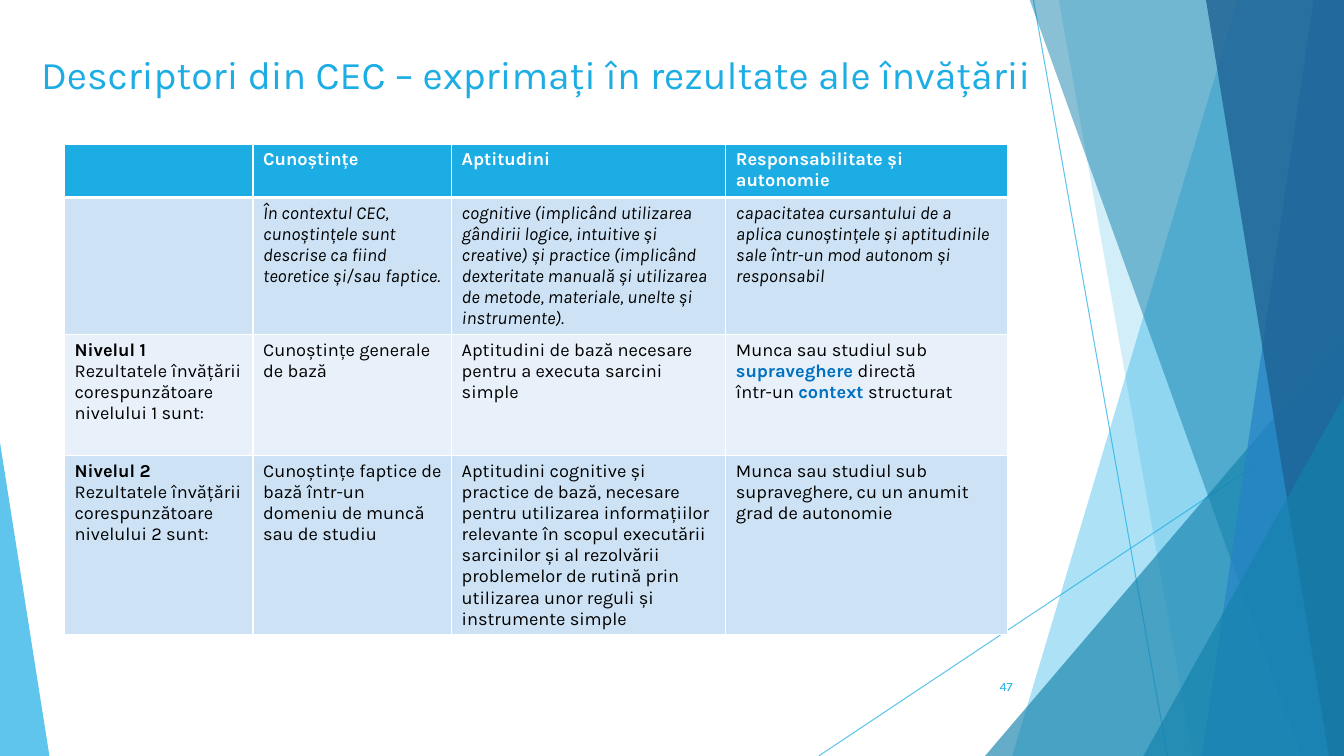
from dataclasses import dataclass
from typing import Optional

from lxml.etree import SubElement
from pptx import Presentation
from pptx.dml.color import RGBColor
from pptx.enum.shapes import MSO_CONNECTOR, MSO_SHAPE
from pptx.enum.text import MSO_ANCHOR, PP_ALIGN
from pptx.oxml.ns import qn
from pptx.util import Inches, Pt

FONT = "Karla"
SKY = RGBColor(0x1C, 0xAD, 0xE4)
TEAL = RGBColor(0x14, 0x82, 0xAC)
BLUE = RGBColor(0x26, 0x83, 0xC6)
NAVY = RGBColor(0x1D, 0x62, 0x94)
ACCENT = RGBColor(0x00, 0x70, 0xC0)
BAND_DARK = RGBColor(0xCD, 0xE3, 0xF5)
BAND_LIGHT = RGBColor(0xE8, 0xF1, 0xFA)
WHITE = RGBColor(0xFF, 0xFF, 0xFF)
BLACK = RGBColor(0x00, 0x00, 0x00)
WIDTH, HEIGHT, PANEL_TOP = 13.33, 7.5, -0.01

HEADER = {"size": Pt(13), "name": FONT, "bold": True, "color": WHITE}
BODY = {"size": Pt(13), "name": FONT, "bold": False, "color": BLACK}
ITALIC = BODY | {"italic": True}
STRONG = BODY | {"bold": True}
KEYWORD = STRONG | {"color": ACCENT}
TITLE = {"size": Pt(28), "name": FONT, "color": SKY}
NUMBER = {"size": Pt(9), "name": FONT, "color": SKY}


@dataclass
class Ray:
    start: tuple[float, float]
    end: tuple[float, float]


@dataclass
class Panel:
    top_left: float
    bottom_left: float
    color: RGBColor
    opacity: int


@dataclass
class Wedge:
    left: float
    top: float
    width: float
    apex: float
    color: RGBColor
    opacity: int


@dataclass
class Span:
    text: str
    style: dict


@dataclass
class Label:
    bounds: tuple[float, float, float, float]
    span: Span
    anchor: MSO_ANCHOR
    alignment: Optional[PP_ALIGN] = None


RAYS = [Ray((10.25, 0), (11.58, HEIGHT)), Ray((WIDTH, 4.03), (8.12, HEIGHT))]
DECOR = [
    Panel(12.28, 10.04, SKY, 36),
    Panel(10.5, 11.83, SKY, 20),
    Wedge(9.77, 3.33, 3.56, 1, TEAL, 66),
    Panel(10.21, 12.91, TEAL, 50),
    Panel(13.03, 11.92, BLUE, 70),
    Panel(11.96, 13.18, NAVY, 80),
    Wedge(11.34, 3.93, 1.99, 1, TEAL, 66),
    Wedge(0, 4.39, 0.49, 0, SKY, 70),
]
LABELS = [
    Label((0.31, 0.45, 10.14, 0.83),
          Span("Descriptori din CEC – exprimați în rezultate ale învățării", TITLE),
          MSO_ANCHOR.TOP),
    Label((9.39, 6.61, 0.75, 0.4), Span("47", NUMBER), MSO_ANCHOR.MIDDLE, PP_ALIGN.RIGHT),
]


def plain(text: str, style: dict = BODY) -> list[list[Span]]:
    return [[Span(text, style)]]


def level(number: int) -> list[list[Span]]:
    return [
        [Span(f"Nivelul {number}", STRONG)],
        [Span(f"Rezultatele învățării corespunzătoare nivelului {number} sunt:", BODY)],
    ]


COLUMNS = [1.87, 1.97, 2.72, 2.79]
ROW_HEIGHTS = [0.53, 1.13, 1.2, 1.65]
ROW_FILLS = [SKY, BAND_DARK, BAND_LIGHT, BAND_DARK]
ROWS = [
    [[], plain("Cunoștințe", HEADER), plain("Aptitudini", HEADER),
     plain("Responsabilitate și autonomie", HEADER)],
    [[],
     plain("În contextul CEC, cunoștințele sunt descrise ca fiind teoretice și/sau faptice.",
           ITALIC),
     plain("cognitive (implicând utilizarea gândirii logice, intuitive și creative) și practice "
           "(implicând dexteritate manuală și utilizarea de metode, materiale, unelte și "
           "instrumente).", ITALIC),
     plain("capacitatea cursantului de a aplica cunoștințele și aptitudinile sale într-un mod "
           "autonom și responsabil", ITALIC)],
    [level(1),
     plain("Cunoștințe generale de bază"),
     plain("Aptitudini de bază necesare pentru a executa sarcini simple"),
     [[Span("Munca sau studiul sub ", BODY), Span("supraveghere ", KEYWORD),
       Span("directă\nîntr-un ", BODY), Span("context ", KEYWORD),
       Span("structurat", BODY)]]],
    [level(2),
     plain("Cunoștințe faptice de bază într-un domeniu de muncă sau de studiu"),
     plain("Aptitudini cognitive și practice de bază, necesare pentru utilizarea informațiilor "
           "relevante în scopul executării sarcinilor și al rezolvării problemelor de rutină "
           "prin utilizarea unor reguli și instrumente simple"),
     plain("Munca sau studiul sub supraveghere, cu un anumit grad de autonomie")],
]


def write_span(para, span: Span) -> None:
    for index, line in enumerate(span.text.split("\n")):
        if index:
            para.add_line_break()
        run = para.add_run()
        run.text = line
        for name, value in span.style.items():
            if name == "color":
                run.font.color.rgb = value
            else:
                setattr(run.font, name, value)


def set_opacity(element, opacity: int) -> None:
    color = next(element.iter(qn("a:srgbClr")))
    SubElement(color, qn("a:alpha"), val=str(opacity * 1000))


def draw_ray(page, ray: Ray) -> None:
    points = [Inches(value) for value in (*ray.start, *ray.end)]
    line = page.shapes.add_connector(MSO_CONNECTOR.STRAIGHT, *points)
    line.line.color.rgb = SKY
    line.line.width = Pt(0.75)
    properties = line._element.spPr
    set_opacity(properties, 70)
    SubElement(properties, qn("a:effectLst"))


def draw_decor(page, item: Panel | Wedge) -> None:
    if isinstance(item, Panel):
        outline = page.shapes.build_freeform(Inches(item.top_left), Inches(PANEL_TOP))
        corners = [(WIDTH, PANEL_TOP), (WIDTH, HEIGHT), (item.bottom_left, HEIGHT)]
        outline.add_line_segments([(Inches(x), Inches(y)) for x, y in corners])
        shape = outline.convert_to_shape()
    else:
        bounds = (item.left, item.top, item.width, HEIGHT - item.top)
        shape = page.shapes.add_shape(MSO_SHAPE.ISOSCELES_TRIANGLE, *map(Inches, bounds))
        shape.adjustments[0] = item.apex
    shape.shadow.inherit = False
    shape.fill.solid()
    shape.fill.fore_color.rgb = item.color
    set_opacity(shape._element.spPr, item.opacity)
    shape.line.fill.background()


def draw_label(page, label: Label) -> None:
    frame = page.shapes.add_textbox(*map(Inches, label.bounds)).text_frame
    frame.word_wrap = True
    frame.vertical_anchor = label.anchor
    para = frame.paragraphs[0]
    para.alignment = label.alignment
    write_span(para, label.span)


def set_borders(cell, bottom_width: int) -> None:
    properties = cell._tc.get_or_add_tcPr()
    for side, width in {"L": 1, "R": 1, "T": 1, "B": bottom_width}.items():
        line = SubElement(properties, qn(f"a:ln{side}"), w=str(Pt(width)))
        SubElement(SubElement(line, qn("a:solidFill")), qn("a:srgbClr"), val=str(WHITE))


def draw_table(page) -> None:
    bounds = (0.64, 1.43, sum(COLUMNS), sum(ROW_HEIGHTS))
    table = page.shapes.add_table(len(ROWS), len(COLUMNS), *map(Inches, bounds)).table
    for column, width in zip(table.columns, COLUMNS):
        column.width = Inches(width)
    for row_index, (row, height, fill) in enumerate(zip(ROWS, ROW_HEIGHTS, ROW_FILLS)):
        table.rows[row_index].height = Inches(height)
        for column_index, content in enumerate(row):
            cell = table.cell(row_index, column_index)
            set_borders(cell, 1 if row_index else 3)
            cell.fill.solid()
            cell.fill.fore_color.rgb = fill
            frame = cell.text_frame
            for index, spans in enumerate(content):
                para = frame.add_paragraph() if index else frame.paragraphs[0]
                for span in spans:
                    write_span(para, span)


def main() -> None:
    deck = Presentation()
    deck.slide_width, deck.slide_height = Inches(WIDTH), Inches(HEIGHT)
    page = deck.slides.add_slide(deck.slide_layouts[6])
    for ray in RAYS:
        draw_ray(page, ray)
    for item in DECOR:
        draw_decor(page, item)
    draw_table(page)
    for label in LABELS:
        draw_label(page, label)
    deck.save("out.pptx")


if __name__ == "__main__":
    main()
